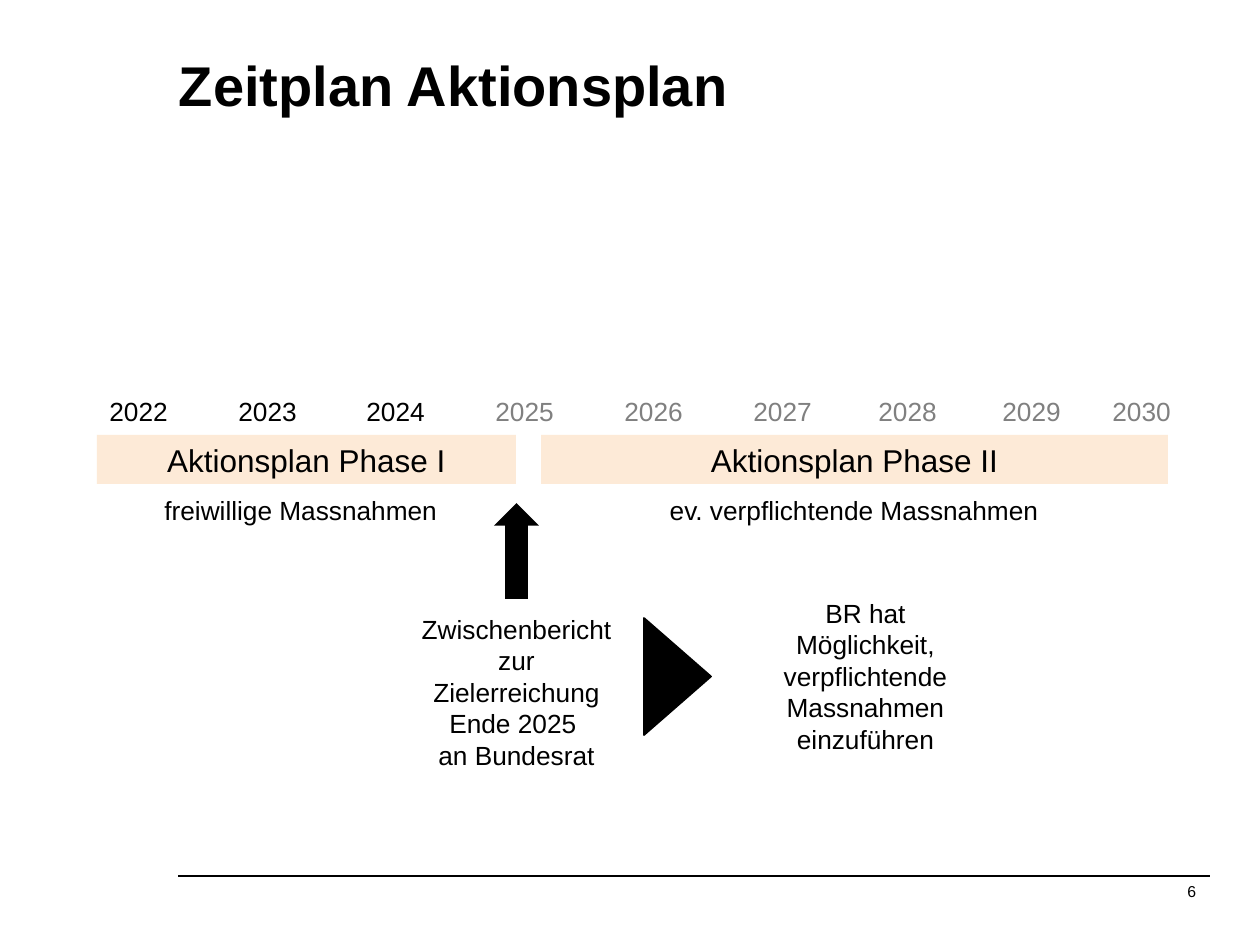
from pptx import Presentation, util as u
from pptx.dml.color import RGBColor
from pptx.enum import shapes, text
from pptx.oxml.ns import qn
from lxml import etree

PX = 914400 // 126
HUE = {"ink": "000000", "grey": "808080", "band": "FDEAD7"}
FONT = "Arial"
KIND = shapes.MSO_SHAPE
LEFT, MID, RIGHT = text.PP_ALIGN.LEFT, text.PP_ALIGN.CENTER, text.PP_ALIGN.RIGHT

# Content: lengths in px
TITLE = "Zeitplan Aktionsplan"
PAGE = "6"
YEARS = [(2022, 97), (2023, 226), (2024, 354), (2025, 483), (2026, 612),
         (2027, 741), (2028, 866), (2029, 990), (2030, 1100)]
LAST_FIRM = 2024
PHASES = [("Aktionsplan Phase I", 97, 419), ("Aktionsplan Phase II", 541, 627)]
NOTES = [  # lines, box, align, wrap
    (["freiwillige Massnahmen"], (152, 488, 302, 44), LEFT, False),
    (["ev. verpflichtende Massnahmen"], (655, 488, 398, 44), MID, False),
    (["Zwischenbericht zur Zielerreichung", "Ende 2025 ", "an Bundesrat"],
     (402, 607, 229, 171), MID, True),
    (["BR hat Möglichkeit, verpflichtende Massnahmen einzuführen"],
     (751, 591, 229, 171), MID, True),
]
MARKS = [  # kind, box, turn
    (KIND.DOWN_ARROW, (494, 503, 45, 96), 180),
    (KIND.ISOSCELES_TRIANGLE, (619, 643, 117, 67), 90),
]


def emu(box):
    return [n * PX for n in box]


def color(name):
    return RGBColor.from_string(HUE[name])


def write(frame, lines, size, hue="ink", align=LEFT, bold=False):
    for i, line in enumerate(lines):
        para = frame.paragraphs[0] if i == 0 else frame.add_paragraph()
        para.alignment = align
        run = para.add_run()
        run.text = line
        font = run.font
        font.name, font.size, font.bold = FONT, u.Pt(size), bold
        font.color.rgb = color(hue)


def bare(frame):
    frame.margin_left = frame.margin_right = 0
    frame.margin_top = frame.margin_bottom = 0


def label(lines, box, size, hue="ink", align=LEFT, wrap=False):
    frame = slide.shapes.add_textbox(*emu(box)).text_frame
    frame.word_wrap = wrap
    write(frame, lines, size, hue, align)
    return frame


def solid(kind, box, hue):
    shape = slide.shapes.add_shape(kind, *emu(box))
    shape.shadow.inherit = False
    shape.fill.solid()
    shape.fill.fore_color.rgb = color(hue)
    shape.line.fill.background()
    return shape


deck = Presentation()
deck.slide_width, deck.slide_height = u.Inches(10), u.Inches(7.5)
slide = deck.slides.add_slide(deck.slide_layouts[5])

# Title
title = slide.shapes.title
title.left, title.top, title.width, title.height = emu((179, 44, 1028, 136))
head = title.text_frame
bare(head)
head.word_wrap = True
head.auto_size = text.MSO_AUTO_SIZE.NONE
head.vertical_anchor = text.MSO_ANCHOR.TOP
write(head, [TITLE], 32, bold=True)
head.paragraphs[0].line_spacing = 1.1

# Footer
rule = slide.shapes.add_connector(shapes.MSO_CONNECTOR.STRAIGHT,
                                  *emu((1210, 876, 178, 876)))
rule.line.color.rgb = color("ink")
rule.line.width = u.Pt(0.75)
etree.SubElement(rule.element.spPr, qn("a:effectLst"))
bare(label([PAGE], (888, 882, 308, 20), 9, align=RIGHT, wrap=True))

# Phases and years
for name, left, width in PHASES:
    band = solid(KIND.RECTANGLE, (left, 435, width, 49), "band")
    band.text_frame.vertical_anchor = text.MSO_ANCHOR.MIDDLE
    write(band.text_frame, [name], 18, align=MID)
for year, left in YEARS:
    label([str(year)], (left, 389, 84, 44), 15,
          "ink" if year <= LAST_FIRM else "grey")

# Marks and notes
for kind, box, turn in MARKS:
    mark = solid(kind, box, "ink")
    mark.rotation = turn
    if kind == KIND.ISOSCELES_TRIANGLE:
        mark.line.color.rgb = color("ink")
        mark.line.width = u.Pt(1)
for lines, box, align, wrap in NOTES:
    label(lines, box, 15, align=align, wrap=wrap)

deck.save("out.pptx")
